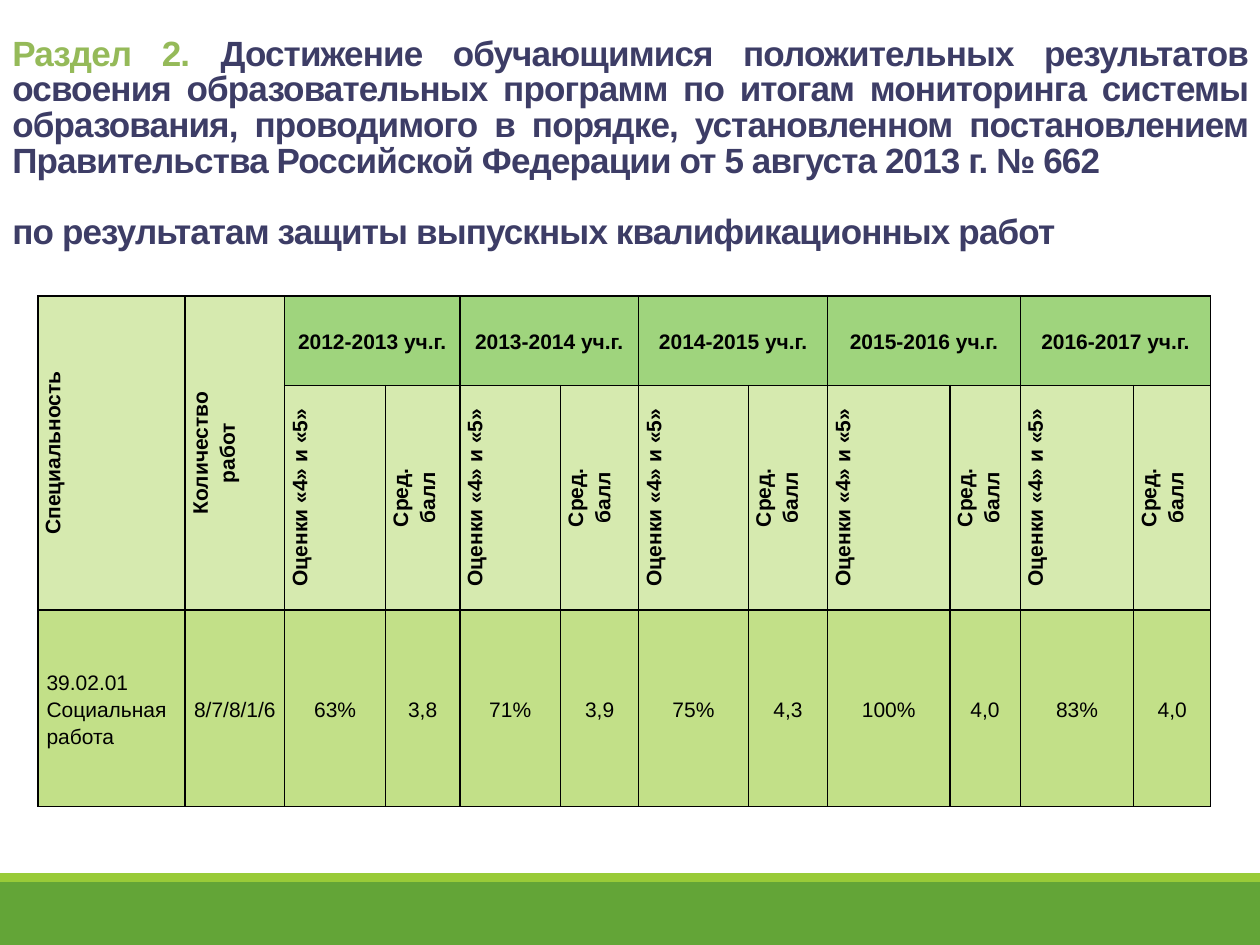
from lxml import etree
from pptx import Presentation
from pptx import util as u
from pptx.dml.color import RGBColor
from pptx.enum import shapes, text
from pptx.oxml import ns

COLORS = {
    "band": "63A537",
    "stripe": "99CB38",
    "section": "95BA59",
    "title": "3D3D66",
    "ink": "000000",
    "label": "D6EAAF",
    "year": "9FD47D",
    "data": "C2E088",
}
FONT = "Arial"
COLUMN_WIDTHS = [1.17, 0.79, 0.8, 0.59, 0.8, 0.62, 0.87, 0.63, 0.97, 0.56, 0.9, 0.61]
ROW_HEIGHTS = [0.71, 1.78, 1.56]
RESULTS = [
    ("2012-2013 уч.г.", "63%", "3,8"),
    ("2013-2014 уч.г.", "71%", "3,9"),
    ("2014-2015 уч.г.", "75%", "4,3"),
    ("2015-2016 уч.г.", "100%", "4,0"),
    ("2016-2017 уч.г.", "83%", "4,0"),
]
TITLE = (
    "Достижение обучающимися положительных результатов освоения "
    "образовательных программ по итогам мониторинга системы образования, "
    "проводимого в порядке, установленном постановлением Правительства "
    "Российской Федерации от 5 августа 2013 г. № 662"
)
SUBTITLE = "по результатам защиты выпускных квалификационных работ"


def color(name):
    return RGBColor.from_string(COLORS[name])


def add_span(para, words, size=12, ink="ink", bold=False, spacing=None):
    span = para.add_run()
    span.text = words
    span.font.name = FONT
    span.font.size = u.Pt(size)
    span.font.bold = bold
    span.font.color.rgb = color(ink)
    if spacing is not None:
        span.font._element.set("spc", str(int(spacing * 100)))


def add_bar(page, top, height, fill):
    bar = page.shapes.add_shape(
        shapes.MSO_SHAPE.RECTANGLE, 0, u.Inches(top), u.Inches(10), u.Inches(height))
    bar.shadow.inherit = False
    bar.fill.solid()
    bar.fill.fore_color.rgb = color(fill)
    bar.line.fill.background()


def add_title(page):
    box = page.shapes.add_textbox(0, u.Inches(0.25), u.Inches(10), u.Inches(1.51))
    frame = box.text_frame
    frame.word_wrap = True
    style = {"size": 20, "bold": True, "spacing": -0.5}
    heading, subheading = frame.paragraphs[0], frame.add_paragraph()
    for para in (heading, subheading):
        para.alignment = text.PP_ALIGN.JUSTIFY
        para.line_spacing = 0.85
    subheading.space_before = u.Pt(20)
    add_span(heading, "Раздел 2. ", ink="section", **style)
    add_span(heading, TITLE, ink="title", **style)
    add_span(subheading, SUBTITLE, ink="title", **style)


def add_borders(cell):
    properties = cell._tc.get_or_add_tcPr()
    for side in ("lnL", "lnR", "lnT", "lnB"):
        border = etree.SubElement(properties, ns.qn(f"a:{side}"), w=str(u.Pt(1)))
        fill = etree.SubElement(border, ns.qn("a:solidFill"))
        etree.SubElement(fill, ns.qn("a:srgbClr"), val=COLORS["ink"])


def fill_cell(cell, lines, fill, bold=False, upright=False,
              align=text.PP_ALIGN.CENTER):
    cell.fill.solid()
    cell.fill.fore_color.rgb = color(fill)
    cell.vertical_anchor = text.MSO_ANCHOR.MIDDLE
    cell.margin_left = cell.margin_right = u.Inches(0.07)
    cell.margin_top = cell.margin_bottom = 0
    if upright:
        cell._tc.get_or_add_tcPr().set("vert", "vert270")
    frame = cell.text_frame
    for index, line in enumerate(lines):
        para = frame.add_paragraph() if index else frame.paragraphs[0]
        para.alignment = align
        para.line_spacing = 1.15
        add_span(para, line, bold=bold)


def add_results(page):
    table = page.shapes.add_table(
        len(ROW_HEIGHTS), len(COLUMN_WIDTHS), u.Inches(0.3), u.Inches(2.35),
        u.Inches(sum(COLUMN_WIDTHS)), u.Inches(sum(ROW_HEIGHTS))).table
    table.first_row = table.horz_banding = False
    for column, width in zip(table.columns, COLUMN_WIDTHS):
        column.width = u.Inches(width)
    for row, height in zip(table.rows, ROW_HEIGHTS):
        row.height = u.Inches(height)
    for cell in table.iter_cells():
        add_borders(cell)

    label = {"fill": "label", "bold": True, "upright": True}
    for column, lines in enumerate((["Специальность"], ["Количество", "работ"])):
        table.cell(0, column).merge(table.cell(1, column))
        fill_cell(table.cell(0, column), lines, **label)
    fill_cell(table.cell(2, 0), ["39.02.01 Социальная работа"], "data",
              align=text.PP_ALIGN.JUSTIFY)
    fill_cell(table.cell(2, 1), ["8/7/8/1/6"], "data")

    for index, (year, share, average) in enumerate(RESULTS):
        left = 2 + 2 * index
        table.cell(0, left).merge(table.cell(0, left + 1))
        fill_cell(table.cell(0, left), [year], "year", bold=True)
        fill_cell(table.cell(1, left), ["Оценки «4» и «5»"], **label)
        fill_cell(table.cell(1, left + 1), ["Сред.", "балл"], **label)
        fill_cell(table.cell(2, left), [share], "data")
        fill_cell(table.cell(2, left + 1), [average], "data")


def main():
    deck = Presentation()
    deck.slide_width, deck.slide_height = u.Inches(10), u.Inches(7.5)
    page = deck.slides.add_slide(deck.slide_layouts[6])
    add_bar(page, 7, 0.5, "band")
    add_bar(page, 6.93, 0.07, "stripe")
    add_title(page)
    add_results(page)
    deck.save("out.pptx")


if __name__ == "__main__":
    main()
